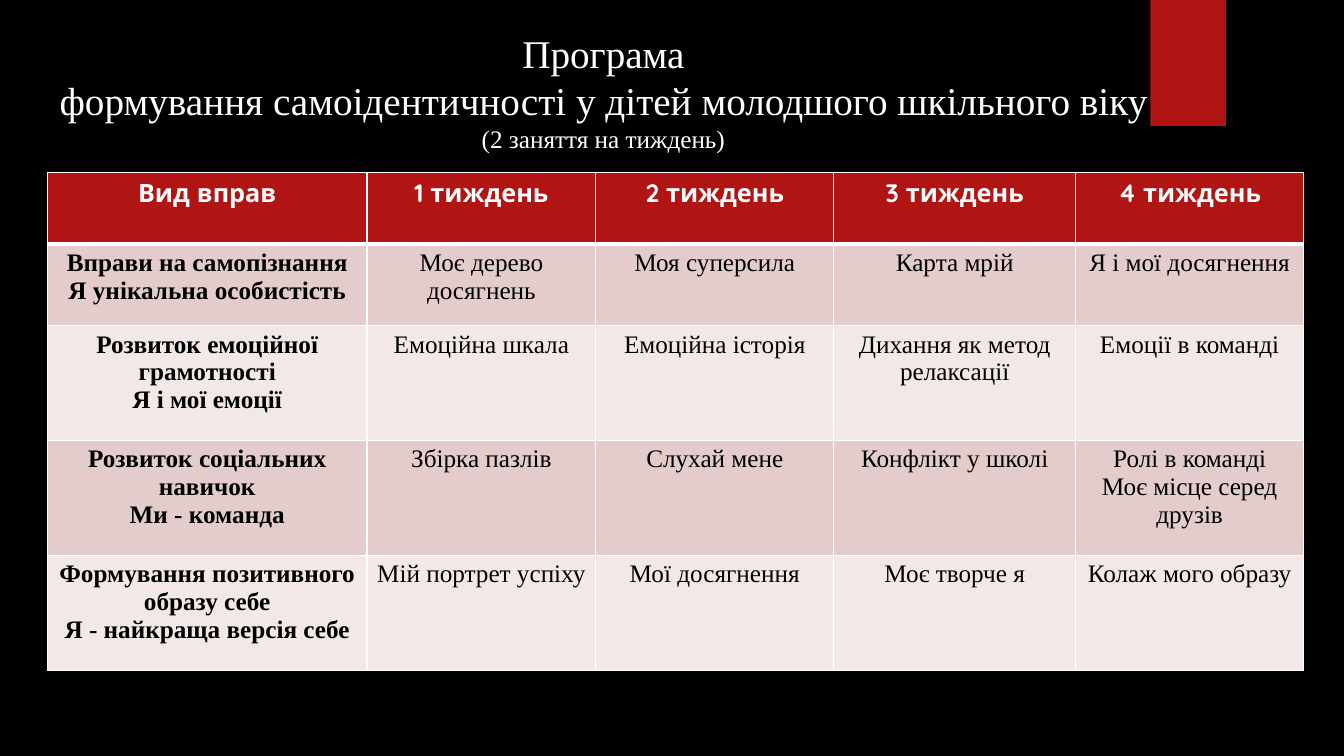
import pptx
import pptx.util
import pptx.dml.color
import pptx.enum.shapes
import pptx.enum.text
import pptx.oxml
from pptx.oxml.ns import nsdecls

RGBColor = pptx.dml.color.RGBColor
PP_ALIGN = pptx.enum.text.PP_ALIGN
BLACK = RGBColor(0x00, 0x00, 0x00)
WHITE = RGBColor(0xFF, 0xFF, 0xFF)
RED = RGBColor(0xB0, 0x15, 0x13)
ROSE = RGBColor(0xE4, 0xCC, 0xCC)
PALE = RGBColor(0xF2, 0xE8, 0xE7)
SERIF = "Times New Roman"
HEADER_FONT = "Quicksand"

WIDTH = pptx.util.Inches(13.33)
HEIGHT = pptx.util.Inches(7.5)
COLUMNS = [3.17, 2.27, 2.36, 2.4, 2.26]
ROWS = [0.71, 0.81, 1.14, 1.14, 1.14]

TITLE = [
    ("Програма", 28),
    ("формування самоідентичності у дітей молодшого шкільного віку", 28),
    ("(2 заняття на тиждень)", 18),
]
PROGRAM = [
    ["Вид вправ", "1 тиждень", "2 тиждень", "3 тиждень", "4 тиждень"],
    ["Вправи на самопізнання\nЯ унікальна особистість", "Моє дерево досягнень",
     "Моя суперсила", "Карта мрій", "Я і мої досягнення"],
    ["Розвиток емоційної грамотності\nЯ і мої емоції", "Емоційна шкала",
     "Емоційна історія", "Дихання як метод релаксації", "Емоції в команді"],
    ["Розвиток соціальних навичок\nМи - команда", "Збірка пазлів",
     "Слухай мене", "Конфлікт у школі", "Ролі в команді\nМоє місце серед друзів"],
    ["Формування позитивного образу себе\nЯ - найкраща версія себе",
     "Мій портрет успіху", "Мої досягнення", "Моє творче я", "Колаж мого образу"],
]


def box(left, top, width, height):
    return [pptx.util.Inches(n) for n in (left, top, width, height)]


def format_text(p, size, font, color, bold=False):
    p.alignment = PP_ALIGN.CENTER
    for r in p.runs:
        r.font.size = pptx.util.Pt(size)
        r.font.name = font
        r.font.color.rgb = color
        r.font.bold = bold


def add_tag(s, area):
    sp = s.shapes.add_shape(pptx.enum.shapes.MSO_SHAPE.RECTANGLE, *area)
    sp.shadow.inherit = False
    sp.fill.solid()
    sp.fill.fore_color.rgb = RED
    sp.line.fill.background()


def set_title(s, area):
    sp = s.shapes.title
    sp.left, sp.top, sp.width, sp.height = area
    tf = sp.text_frame
    tf.text = "\n".join(text for text, size in TITLE)
    tf.word_wrap = True
    tf.vertical_anchor = pptx.enum.text.MSO_ANCHOR.MIDDLE
    for p, (text, size) in zip(tf.paragraphs, TITLE):
        format_text(p, size, SERIF, WHITE)


def set_borders(cell, header_bottom):
    tc_pr = cell._tc.get_or_add_tcPr()
    for i, side in enumerate(("lnL", "lnR", "lnT", "lnB")):
        points = 3 if side == header_bottom else 1
        tc_pr.insert(i, pptx.oxml.parse_xml(
            f'<a:{side} {nsdecls("a")} w="{pptx.util.Pt(points)}"><a:solidFill>'
            f'<a:srgbClr val="{WHITE}"/></a:solidFill></a:{side}>'))


def add_program(s, area):
    left, top, width, height = area
    table = s.shapes.add_table(len(ROWS), len(COLUMNS), *area).table
    for column, share in zip(table.columns, COLUMNS):
        column.width = int(width * share / sum(COLUMNS))
    for row, share in zip(table.rows, ROWS):
        row.height = int(height * share / sum(ROWS))
    for i, texts in enumerate(PROGRAM):
        for j, text in enumerate(texts):
            cell = table.cell(i, j)
            cell.text_frame.text = text
            cell.fill.solid()
            cell.fill.fore_color.rgb = RED if i == 0 else ROSE if i % 2 else PALE
            set_borders(cell, {0: "lnB", 1: "lnT"}.get(i))
            font, color = (HEADER_FONT, WHITE) if i == 0 else (SERIF, BLACK)
            for p in cell.text_frame.paragraphs:
                format_text(p, 18, font, color, i == 0 or j == 0)


def build_program_slide(prs):
    s = prs.slides.add_slide(prs.slide_layouts[5])
    s.background.fill.solid()
    s.background.fill.fore_color.rgb = BLACK
    add_tag(s, box(11.41, 0, 0.75, 1.25))
    set_title(s, box(0.47, 0.28, 11.03, 1.25))
    add_program(s, box(0.47, 1.71, sum(COLUMNS), sum(ROWS)))


def main():
    prs = pptx.Presentation()
    prs.slide_width, prs.slide_height = WIDTH, HEIGHT
    build_program_slide(prs)
    prs.save("out.pptx")


if __name__ == "__main__":
    main()
